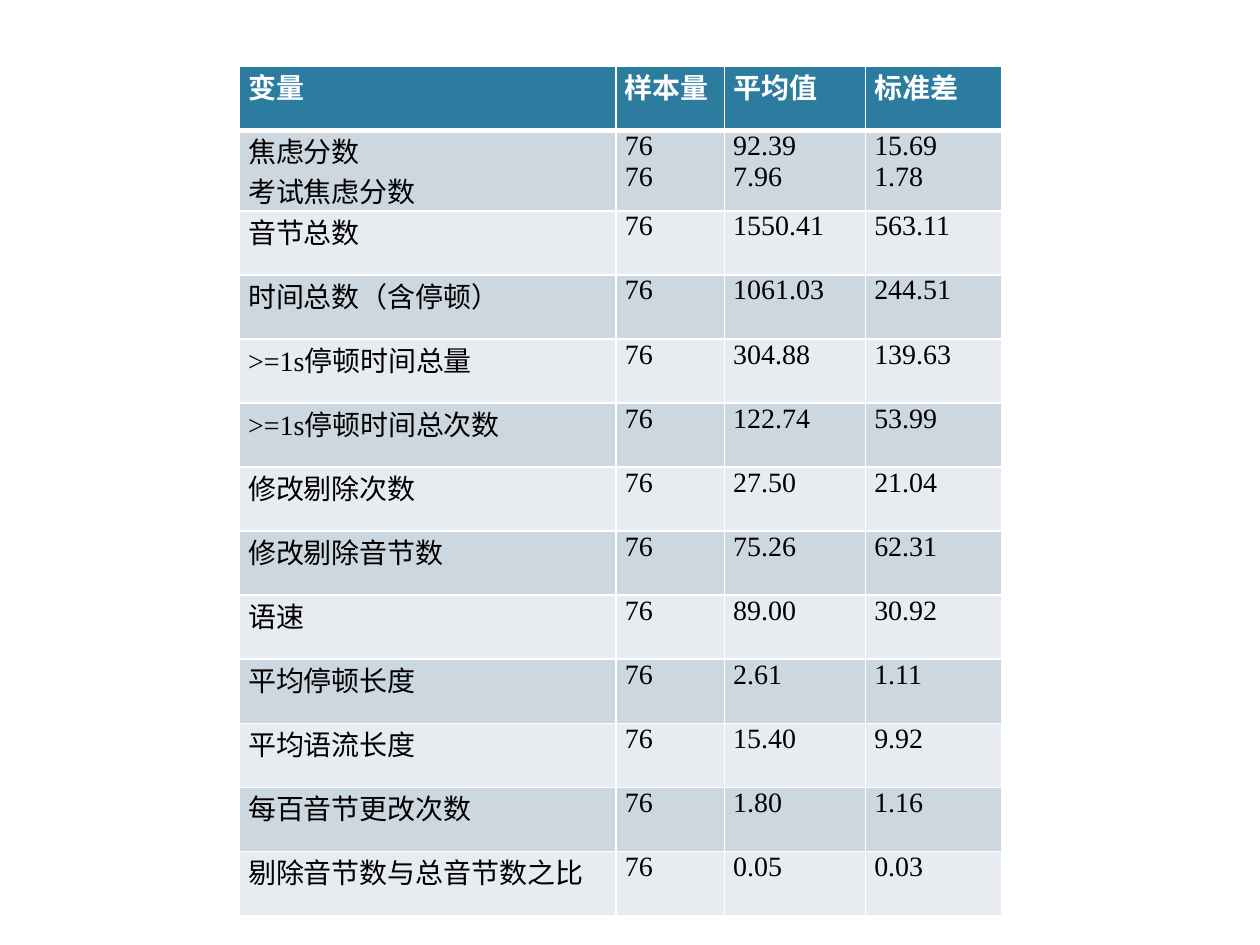
import pptx
import pptx.util
import pptx.dml.color
import pptx.oxml
import pptx.oxml.ns

SLIDE_W, SLIDE_H = 10, 7.5
COLUMN_WIDTHS = [2.99, 0.86, 1.12, 1.08]
ROW_HEIGHT = 6.61 / 13
SAMPLE_SIZE = "76"
HEADER = ["变量", "样本量", "平均值", "标准差"]
STATISTICS = [
    ("焦虑分数\n考试焦虑分数", "92.39\n7.96", "15.69\n1.78"),
    ("音节总数", "1550.41", "563.11"),
    ("时间总数（含停顿）", "1061.03", "244.51"),
    (">=1s停顿时间总量", "304.88", "139.63"),
    (">=1s停顿时间总次数", "122.74", "53.99"),
    ("修改剔除次数", "27.50", "21.04"),
    ("修改剔除音节数", "75.26", "62.31"),
    ("语速", "89.00", "30.92"),
    ("平均停顿长度", "2.61", "1.11"),
    ("平均语流长度", "15.40", "9.92"),
    ("每百音节更改次数", "1.80", "1.16"),
    ("剔除音节数与总音节数之比", "0.05", "0.03"),
]


def color(value):
    return pptx.dml.color.RGBColor.from_string(value)


def set_format(obj, values):
    for name, value in values.items():
        setattr(obj, name, value)


def add_borders(cell, widths, value):
    tcPr = cell._tc.get_or_add_tcPr()
    for side, width in widths.items():
        tcPr.append(pptx.oxml.parse_xml(
            f'<a:ln{side} {pptx.oxml.ns.nsdecls("a")} w="{pptx.util.Pt(width)}">'
            f'<a:solidFill><a:srgbClr val="{value}"/></a:solidFill></a:ln{side}>'))


def fill_cell(cell, text, fill, text_color, bold, borders):
    side = pptx.util.Inches(0.07)
    set_format(cell, {"margin_left": side, "margin_right": side,
                      "margin_top": 0, "margin_bottom": 0, "text": text})
    add_borders(cell, borders, "FFFFFF")
    cell.fill.solid()
    cell.fill.fore_color.rgb = color(fill)
    for p in cell.text_frame.paragraphs:
        for r in p.runs:
            set_format(r.font, {"name": "Times New Roman", "bold": bold,
                                "size": pptx.util.Pt(16)})
            r.font.color.rgb = color(text_color)


def add_statistics_table(s, rows, left, top):
    width = pptx.util.Inches(sum(COLUMN_WIDTHS))
    height = pptx.util.Inches(ROW_HEIGHT * len(rows))
    table = s.shapes.add_table(len(rows), len(COLUMN_WIDTHS),
                               left, top, width, height).table
    for column, column_width in zip(table.columns, COLUMN_WIDTHS):
        column.width = pptx.util.Inches(column_width)
    for i, values in enumerate(rows):
        is_header = i == 0
        fill = "2C7C9F" if is_header else ("E8ECF0", "CDD7DF")[i % 2]
        text_color = "FFFFFF" if is_header else "000000"
        borders = {"L": 1, "R": 1, "T": 3 if i == 1 else 1, "B": 3 if is_header else 1}
        for j, text in enumerate(values):
            fill_cell(table.cell(i, j), text, fill, text_color, is_header, borders)


def main():
    prs = pptx.Presentation()
    set_format(prs, {"slide_width": pptx.util.Inches(SLIDE_W),
                     "slide_height": pptx.util.Inches(SLIDE_H)})
    s = prs.slides.add_slide(prs.slide_layouts[6])
    rows = [HEADER]
    for variable, mean, deviation in STATISTICS:
        samples = "\n".join([SAMPLE_SIZE] * len(mean.split("\n")))
        rows.append([variable, samples, mean, deviation])
    add_statistics_table(s, rows, int(prs.slide_width * 0.19), int(prs.slide_height * 0.07))
    prs.save("out.pptx")


if __name__ == "__main__":
    main()
